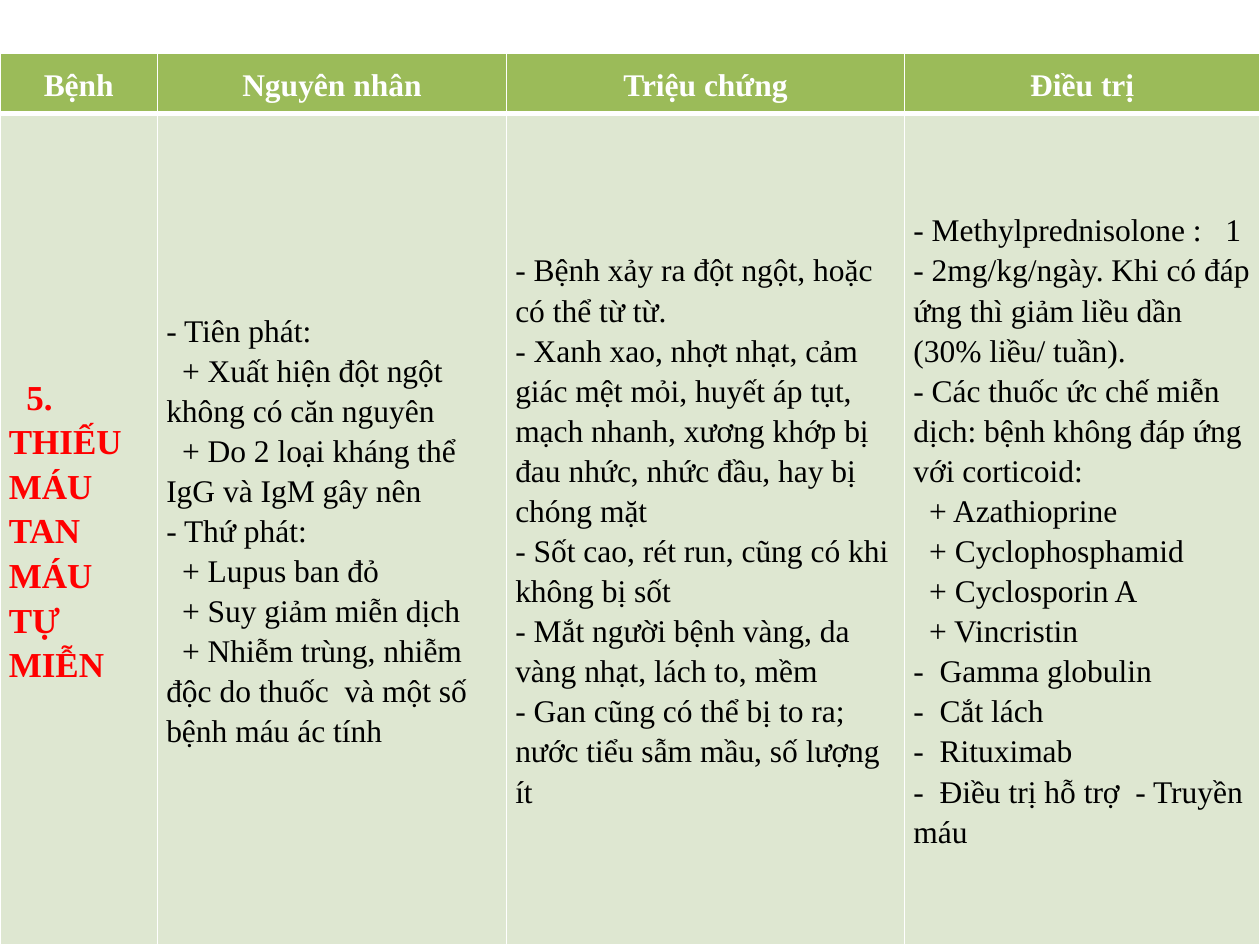
from lxml.etree import SubElement
from pptx import Presentation
from pptx.dml.color import RGBColor
from pptx.enum.text import MSO_ANCHOR, PP_ALIGN
from pptx.oxml.ns import qn
from pptx.util import Inches, Pt

COLS = [1.25, 2.77, 3.16, 2.82]
ROWS = [0.48, 6.6]
HEADERS = ["Bệnh", "Nguyên nhân", "Triệu chứng", "Điều trị"]
DETAILS = [
    ["5. THIẾU MÁU TAN MÁU TỰ MIỄN"],
    ["- Tiên phát:",
     "+ Xuất hiện đột ngột không có căn nguyên",
     "+ Do 2 loại kháng thể IgG và IgM gây nên",
     "- Thứ phát:",
     "+ Lupus ban đỏ",
     "+ Suy giảm miễn dịch",
     "+ Nhiễm trùng, nhiễm độc do thuốc  và một số bệnh máu ác tính"],
    ["- Bệnh xảy ra đột ngột, hoặc có thể từ từ.",
     "- Xanh xao, nhợt nhạt, cảm giác mệt mỏi, huyết áp tụt, mạch nhanh, "
     "xương khớp bị đau nhức, nhức đầu, hay bị chóng mặt",
     "- Sốt cao, rét run, cũng có khi không bị sốt",
     "- Mắt người bệnh vàng, da vàng nhạt, lách to, mềm",
     "- Gan cũng có thể bị to ra; nước tiểu sẫm mầu, số lượng ít"],
    ["- Methylprednisolone :   1 - 2mg/kg/ngày. Khi có đáp ứng thì giảm "
     "liều dần (30% liều/ tuần).",
     "- Các thuốc ức chế miễn dịch: bệnh không đáp ứng với corticoid:",
     "+ Azathioprine",
     "+ Cyclophosphamid",
     "+ Cyclosporin A",
     "+ Vincristin",
     "-  Gamma globulin",
     "-  Cắt lách",
     "-  Rituximab",
     "-  Điều trị hỗ trợ  - Truyền máu"],
]
HEADER = dict(size=18, bold=True, color="FFFFFF", align=PP_ALIGN.CENTER)
DISEASE = dict(size=20, bold=True, color="FF0000", align=PP_ALIGN.LEFT)
BODY = dict(size=18, bold=False, color="000000", align=PP_ALIGN.LEFT)
MARGINS = dict(margin_left=0.07, margin_right=0.07, margin_top=0, margin_bottom=0)


def fill_cell(cell, lines, fill, style):
    cell.fill.solid()
    cell.fill.fore_color.rgb = RGBColor.from_string(fill)
    cell.vertical_anchor = MSO_ANCHOR.MIDDLE
    for name, value in MARGINS.items():
        setattr(cell, name, Inches(value))
    tf = cell.text_frame
    for i, line in enumerate(lines):
        p = tf.paragraphs[0] if i == 0 else tf.add_paragraph()
        p.alignment = style["align"]
        p.line_spacing = 1.15
        if line[0] in "+5":  # sub-items and the disease number start indented
            pPr = p._p.get_or_add_pPr()
            pPr.set("marL", "0")
            pPr.set("indent", str(Pt(style["size"] / 2)))
        r = p.add_run()
        r.text = line
        r.font.name = "Times New Roman"
        r.font.size = Pt(style["size"])
        r.font.bold = style["bold"]
        r.font.color.rgb = RGBColor.from_string(style["color"])


def set_borders(cell, widths):
    """Draw white borders; widths maps L, R, T, B to points."""
    tcPr = cell._tc.get_or_add_tcPr()
    for i, (side, width) in enumerate(widths.items()):
        ln = SubElement(tcPr, qn(f"a:ln{side}"), w=str(Pt(width)))
        SubElement(SubElement(ln, qn("a:solidFill")), qn("a:srgbClr"), val="FFFFFF")
        tcPr.insert(i, ln)


prs = Presentation()
prs.slide_width, prs.slide_height = Inches(10), Inches(7.5)
s = prs.slides.add_slide(prs.slide_layouts[6])

table = s.shapes.add_table(len(ROWS), len(COLS), 0, Inches(7.5 - sum(ROWS)),
                           prs.slide_width, Inches(sum(ROWS))).table
for col, width in zip(table.columns, COLS):
    col.width = Inches(width)
for row, height in zip(table.rows, ROWS):
    row.height = Inches(height)

for c, (header, details) in enumerate(zip(HEADERS, DETAILS)):
    head, body = table.cell(0, c), table.cell(1, c)
    fill_cell(head, [header], "9BBB59", HEADER)
    fill_cell(body, details, "DEE7D1", BODY if c else DISEASE)
    set_borders(head, dict(L=1, R=1, T=1, B=3))
    set_borders(body, dict(L=1, R=1, T=3, B=1))

prs.save("out.pptx")
